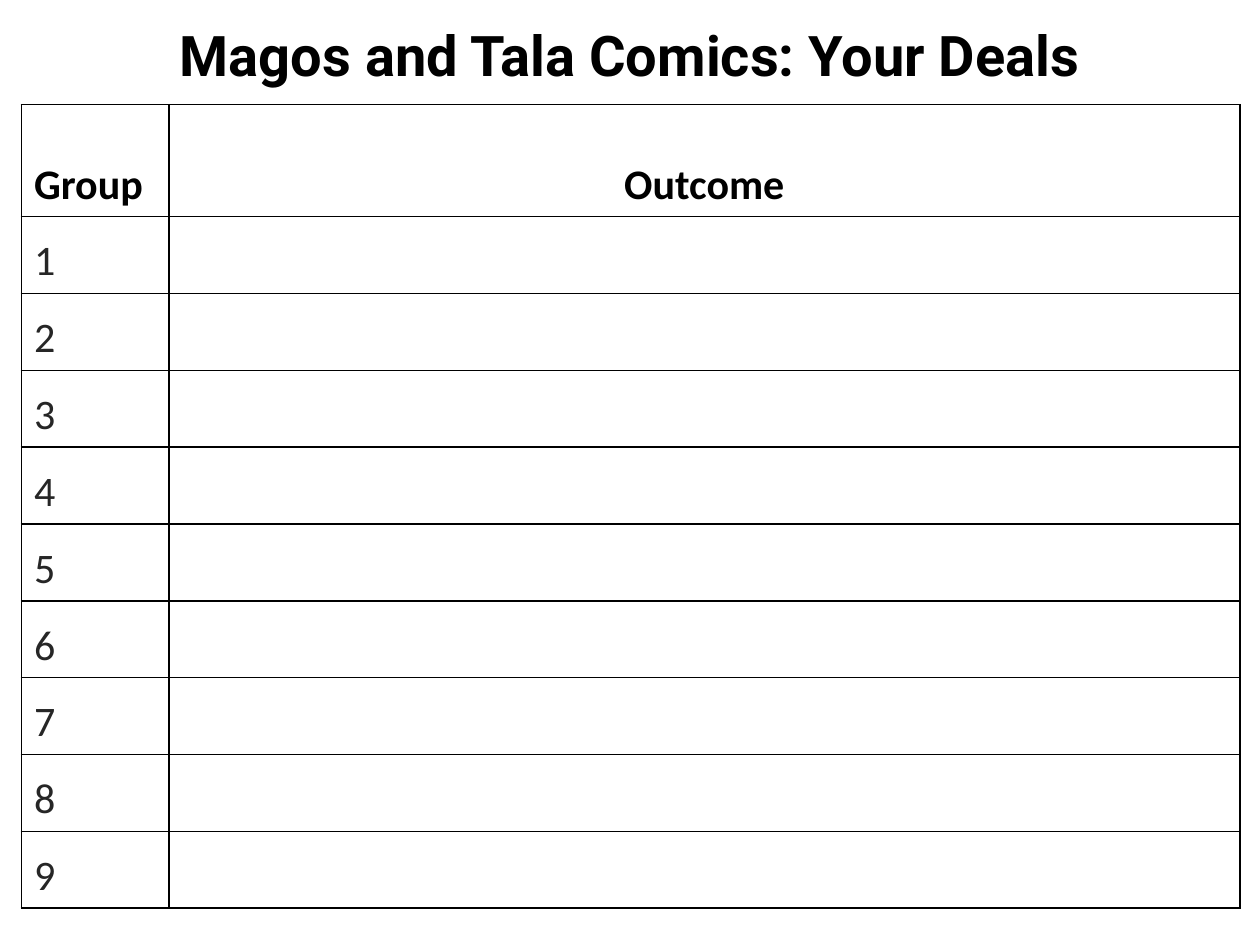
from lxml.etree import SubElement as Sub
from pptx import Presentation
from pptx.dml.color import RGBColor
from pptx.enum.text import MSO_ANCHOR as Anchor, PP_ALIGN as Align
from pptx.oxml.ns import qn
from pptx.util import Inches, Pt

GROUPS = 9


def color(code):
    return RGBColor.from_string(code)


class Deck:
    ink, soft = "000000", "262626"
    head, body = "Roboto", "Calibri"

    def __init__(self, slide):
        self.slide = slide

    def text(self, frame, words, align=Align.LEFT, tint=ink, **style):
        para = frame.paragraphs[0]
        para.alignment = align
        run = para.add_run()
        run.text = words
        for key, value in style.items():
            setattr(run.font, key, value)
        run.font.color.rgb = color(tint)

    def title(self, words, left, top, width, height):
        box = self.slide.shapes.title
        place = dict(left=left, top=top, width=width, height=height)
        for key, value in place.items():
            setattr(box, key, Inches(value))
        box.text_frame.vertical_anchor = Anchor.MIDDLE
        self.text(box.text_frame, words, Align.CENTER,
                  name=self.head, size=Pt(32), bold=True)

    def border(self, cell):
        props = cell._tc.get_or_add_tcPr()
        for side in ("lnL", "lnR", "lnT", "lnB"):
            line = Sub(props, qn(f"a:{side}"), w=str(Pt(1)))
            fill = Sub(line, qn("a:solidFill"))
            Sub(fill, qn("a:srgbClr"), val=self.ink)

    def table(self, rows, left, top, widths, heights):
        area = map(Inches, (left, top, sum(widths), sum(heights)))
        grid = self.slide.shapes.add_table(len(rows), len(widths), *area).table
        for col, width in zip(grid.columns, widths):
            col.width = Inches(width)
        for row, height in zip(grid.rows, heights):
            row.height = Inches(height)
        for r, row in enumerate(rows):
            for c, words in enumerate(row):
                cell = grid.cell(r, c)
                self.border(cell)
                cell.fill.background()
                cell.vertical_anchor = Anchor.BOTTOM
                if words:
                    self.text(cell.text_frame, words,
                              Align.CENTER if c else Align.LEFT,
                              self.soft if r else self.ink,
                              name=self.body, size=Pt(24), bold=r == 0)


def main():
    show = Presentation()
    show.slide_width, show.slide_height = Inches(10), Inches(7.5)
    deck = Deck(show.slides.add_slide(show.slide_layouts[5]))

    # Outcome table: one row for each group
    rows = [("Group", "Outcome")]
    rows += [(str(n), "") for n in range(1, GROUPS + 1)]
    heights = [0.89] + [0.61] * GROUPS
    deck.table(rows, 0.17, 0.83, (1.17, 8.5), heights)

    # Heading
    deck.title("Magos and Tala Comics: Your Deals", 0, 0.11, 10, 0.64)

    show.save("out.pptx")


if __name__ == "__main__":
    main()
